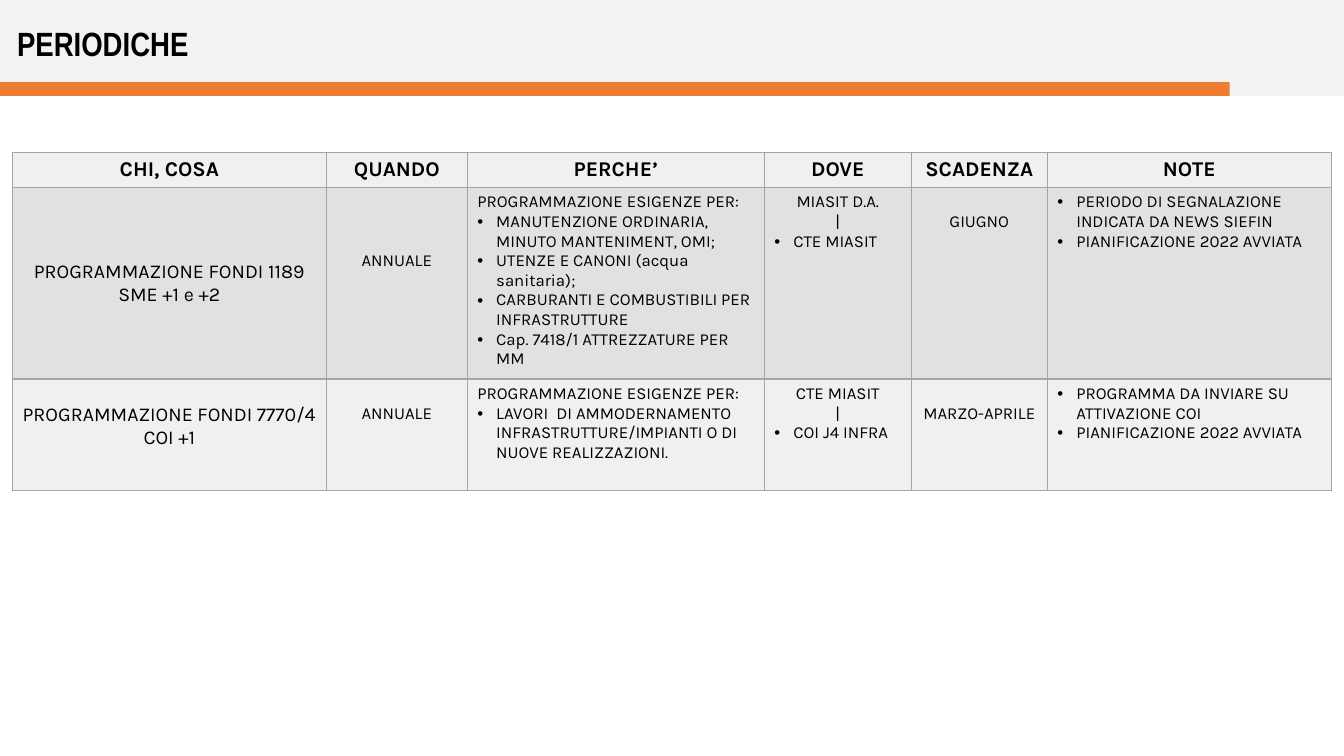
import pptx
import pptx.dml.color
import pptx.enum.shapes
import pptx.enum.text
import pptx.oxml
import pptx.oxml.ns
import pptx.util
from lxml import etree

Pt = pptx.util.Pt
Align = pptx.enum.text.PP_ALIGN
Anchor = pptx.enum.text.MSO_ANCHOR

WIDTHS = [224.4, 100.6, 212.2, 105, 97.2, 202.8]
HEADS = ["CHI, COSA", "QUANDO", "PERCHE’", "DOVE", "SCADENZA", "NOTE"]
ROWS = [
    (137, "E1E1E1", [49, 42, 0, 0, 14, 0], [
        ["PROGRAMMAZIONE FONDI 1189 SME +1 e +2"],
        ["ANNUALE"],
        ["PROGRAMMAZIONE ESIGENZE PER:",
         "•MANUTENZIONE ORDINARIA, MINUTO MANTENIMENT, OMI;",
         "•UTENZE E CANONI (acqua sanitaria);",
         "•CARBURANTI E COMBUSTIBILI PER INFRASTRUTTURE",
         "•Cap. 7418/1 ATTREZZATURE PER MM"],
        ["MIASIT D.A.", "|", "•CTE MIASIT"],
        ["GIUGNO"],
        ["•PERIODO DI SEGNALAZIONE INDICATA DA NEWS SIEFIN",
         "•PIANIFICAZIONE 2022 AVVIATA"],
    ]),
    (79.4, "F0F0F0", [14, 14, 0, 0, 14, 0], [
        ["PROGRAMMAZIONE FONDI 7770/4 COI +1"],
        ["ANNUALE"],
        ["PROGRAMMAZIONE ESIGENZE PER:",
         "•LAVORI  DI AMMODERNAMENTO INFRASTRUTTURE/IMPIANTI O DI NUOVE REALIZZAZIONI."],
        ["CTE MIASIT", "|", "•COI J4 INFRA"],
        ["MARZO-APRILE"],
        ["•PROGRAMMA DA INVIARE SU ATTIVAZIONE COI",
         "•PIANIFICAZIONE 2022 AVVIATA"],
    ]),
]


def paint(fill, color):
    fill.solid()
    fill.fore_color.rgb = pptx.dml.color.RGBColor.from_string(color)


def style(para, name, size, bold):
    font = para.font
    font.name, font.size, font.bold = name, Pt(size), bold
    paint(font.fill, "000000")


def bar(slide, left, top, width, height, color):
    kind = pptx.enum.shapes.MSO_SHAPE.RECTANGLE
    shape = slide.shapes.add_shape(kind, Pt(left), Pt(top), Pt(width), Pt(height))
    shape.shadow.inherit = False
    shape.line.fill.background()
    paint(shape.fill, color)


def header(slide, left, top, width, height):
    bar(slide, left, top, width, height, "F2F2F2")
    bar(slide, left, top + height - 10, width - 81.6, 10, "ED7D31")
    title = slide.shapes.title
    title._element.getparent().append(title._element)
    title.left, title.top = Pt(left + 5), Pt(top + 12.5)
    title.width, title.height = Pt(590), Pt(36)
    frame = title.text_frame
    frame.text = "PERIODICHE"
    frame.auto_size = pptx.enum.text.MSO_AUTO_SIZE.NONE
    frame.vertical_anchor = Anchor.MIDDLE
    para = frame.paragraphs[0]
    para.alignment = Align.LEFT
    style(para, "Arial Narrow", 24, True)


def border(cell):
    props = cell._tc.get_or_add_tcPr()
    space = pptx.oxml.ns.nsdecls("a")
    for side in "LRTB":
        props.append(pptx.oxml.parse_xml(
            f'<a:ln{side} {space} w="12700"><a:solidFill>'
            f'<a:srgbClr val="A5A5A5"/></a:solidFill></a:ln{side}>'))


def bullet(para):
    props = para._p.get_or_add_pPr()
    props.set("marL", str(Pt(13.5)))
    props.set("indent", str(-Pt(13.5)))
    qn = pptx.oxml.ns.qn
    etree.SubElement(props, qn("a:buFont")).set("typeface", "Arial")
    etree.SubElement(props, qn("a:buChar")).set("char", "•")


def write(cell, lines, color, size, align, bold=False, lead=0):
    border(cell)
    paint(cell.fill, color)
    cell.margin_top = Pt(3.6 + lead)
    frame = cell.text_frame
    for i, line in enumerate(lines):
        para = frame.add_paragraph() if i else frame.paragraphs[0]
        para.text = line.lstrip("•")
        if line.startswith("•"):
            bullet(para)
            para.alignment = Align.LEFT
        else:
            para.alignment = align
        style(para, "Karla", size, bold)


def grid(slide, left, top):
    high = [25] + [row[0] for row in ROWS]
    table = slide.shapes.add_table(
        len(high), len(HEADS), Pt(left), Pt(top),
        Pt(sum(WIDTHS)), Pt(sum(high))).table
    table.horz_banding = False
    for col, width in zip(table.columns, WIDTHS):
        col.width = Pt(width)
    for row, height in zip(table.rows, high):
        row.height = Pt(height)
    for c, head in enumerate(HEADS):
        cell = table.cell(0, c)
        write(cell, [head], "F0F0F0", 15, Align.CENTER, True)
        cell.vertical_anchor = Anchor.MIDDLE
    for r, (_, color, leads, texts) in enumerate(ROWS, 1):
        for c, lines in enumerate(texts):
            align = Align.LEFT if HEADS[c] in ("PERCHE’", "NOTE") else Align.CENTER
            write(table.cell(r, c), lines, color, 12 if c else 14, align,
                  lead=leads[c])


def main():
    deck = pptx.Presentation()
    deck.slide_width, deck.slide_height = Pt(960), Pt(540)
    slide = deck.slides.add_slide(deck.slide_layouts.get_by_name("Title Only"))
    header(slide, 0, 0, 960, 68.6)
    grid(slide, 8.8, 108.8)
    deck.save("out.pptx")


if __name__ == "__main__":
    main()
